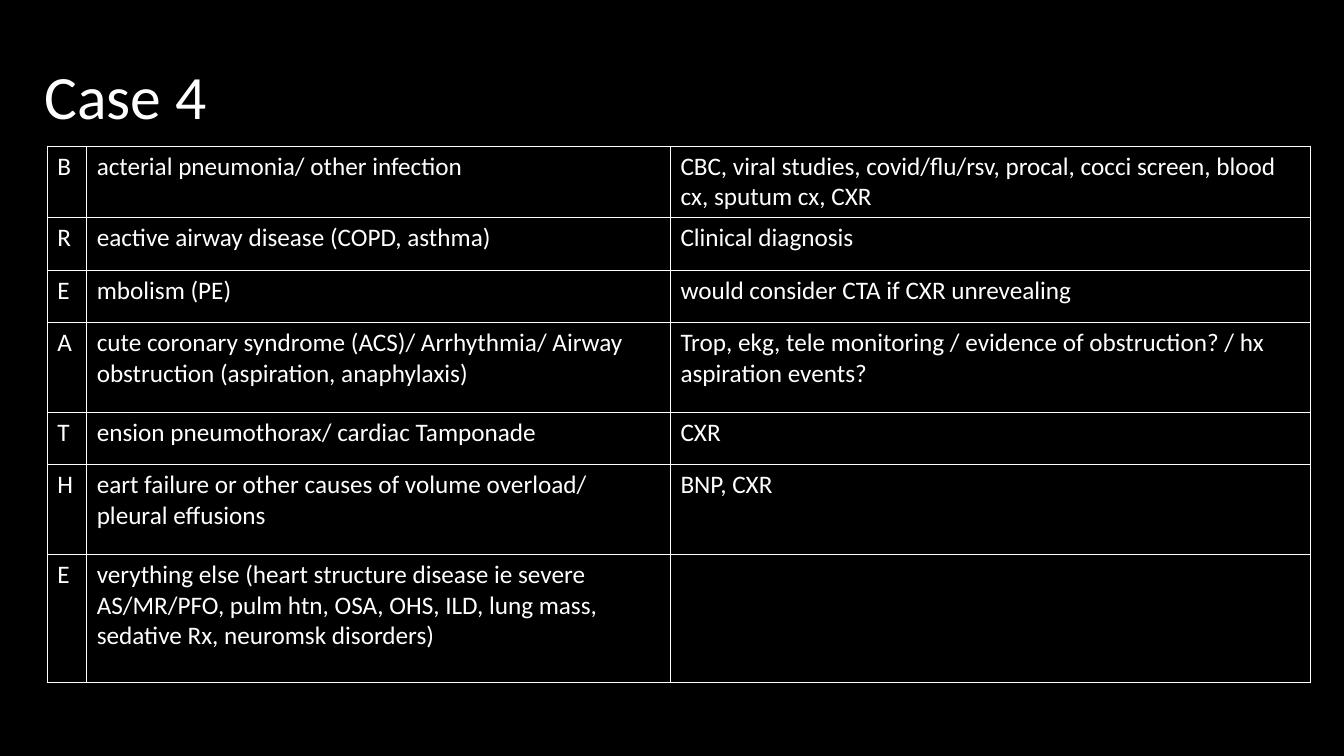
from lxml import etree
from pptx import Presentation
from pptx.dml.color import RGBColor
from pptx.enum.text import MSO_ANCHOR, PP_ALIGN
from pptx.oxml.ns import qn
from pptx.util import Inches, Pt

MIDDLE, TOP = MSO_ANCHOR.MIDDLE, MSO_ANCHOR.TOP
LEFT = PP_ALIGN.LEFT

COLORS = {"background": "000000", "text": "FFFFFF", "border": "FFFFFF"}
FONT = "Calibri"
TITLE_ONLY = 5

COLUMN_WIDTHS = [0.39, 5.79, 6.35]
# Row height, letter, cause, work-up
BREATHE_ROWS = [
    (0.52, "B", "acterial pneumonia/ other infection",
     "CBC, viral studies, covid/flu/rsv, procal, cocci screen, blood cx, sputum cx, CXR"),
    (0.52, "R", "eactive airway disease (COPD, asthma)", "Clinical diagnosis"),
    (0.52, "E", "mbolism (PE)", "would consider CTA if CXR unrevealing"),
    (0.89, "A", "cute coronary syndrome (ACS)/ Arrhythmia/ Airway obstruction "
     "(aspiration, anaphylaxis)",
     "Trop, ekg, tele monitoring / evidence of obstruction? / hx aspiration events?"),
    (0.52, "T", "ension pneumothorax/ cardiac Tamponade", "CXR"),
    (0.89, "H", "eart failure or other causes of volume overload/ pleural effusions",
     "BNP, CXR"),
    (1.27, "E", "verything else (heart structure disease ie severe AS/MR/PFO, pulm htn, "
     "OSA, OHS, ILD, lung mass, sedative Rx, neuromsk disorders)", ""),
]


def write_text(frame, text, size, anchor=TOP, line_spacing=None):
    frame.word_wrap = True
    frame.vertical_anchor = anchor
    para = frame.paragraphs[0]
    para.alignment = LEFT
    para.line_spacing = line_spacing
    para.font.size = Pt(size)
    if text:
        span = para.add_run()
        span.text = text
        span.font.name = FONT
        span.font.size = Pt(size)
        span.font.color.rgb = RGBColor.from_string(COLORS["text"])


def add_borders(cell, width):
    properties = cell._tc.get_or_add_tcPr()
    for side in ("a:lnL", "a:lnR", "a:lnT", "a:lnB"):
        line = etree.SubElement(properties, qn(side), w=str(Pt(width)))
        fill = etree.SubElement(line, qn("a:solidFill"))
        etree.SubElement(fill, qn("a:srgbClr"), val=COLORS["border"])


def add_title(page, text, left, top, width, height):
    title = page.shapes.title
    title.left, title.top = Inches(left), Inches(top)
    title.width, title.height = Inches(width), Inches(height)
    write_text(title.text_frame, text, 44, anchor=MIDDLE, line_spacing=0.9)


def add_breathe_table(page, left, top):
    width = sum(COLUMN_WIDTHS)
    height = sum(row[0] for row in BREATHE_ROWS)
    table = page.shapes.add_table(
        len(BREATHE_ROWS), len(COLUMN_WIDTHS),
        Inches(left), Inches(top), Inches(width), Inches(height)).table
    table.first_row = False
    table.horz_banding = False
    for column, column_width in zip(table.columns, COLUMN_WIDTHS):
        column.width = Inches(column_width)
    for row, (row_height, *texts) in zip(table.rows, BREATHE_ROWS):
        row.height = Inches(row_height)
        for cell, text in zip(row.cells, texts):
            write_text(cell.text_frame, text, 18)
            add_borders(cell, 1)
            cell.fill.background()


def main():
    deck = Presentation()
    deck.slide_width, deck.slide_height = Inches(13.33), Inches(7.5)
    page = deck.slides.add_slide(deck.slide_layouts[TITLE_ONLY])
    page.background.fill.solid()
    page.background.fill.fore_color.rgb = RGBColor.from_string(COLORS["background"])

    # Heading
    add_title(page, "Case 4", 0.34, 0.26, 11.5, 1.45)
    # Mnemonic with causes and work-up
    add_breathe_table(page, 0.47, 1.45)

    deck.save("out.pptx")


if __name__ == "__main__":
    main()
